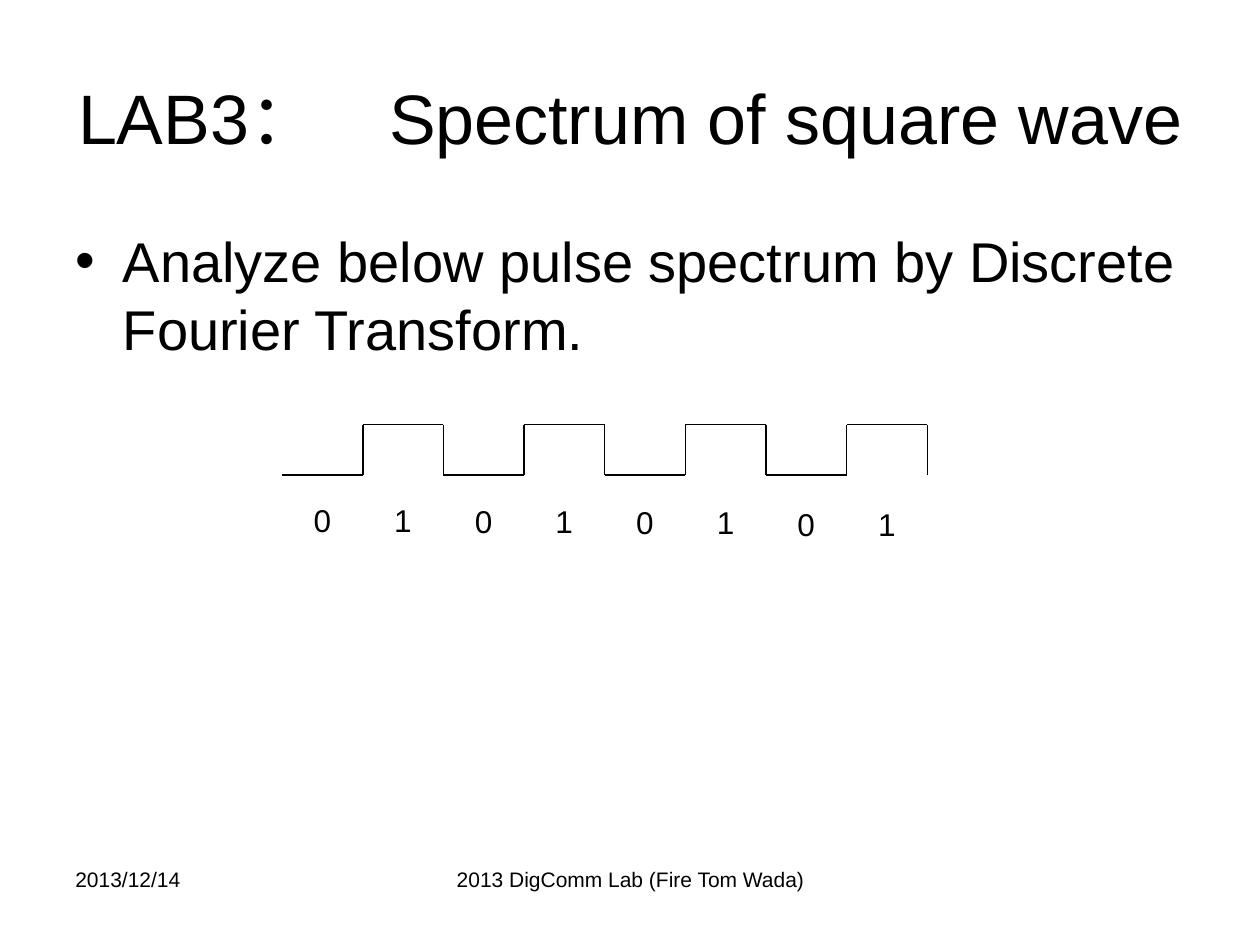
"""Build the LAB3 slide on the spectrum of a square wave."""
from dataclasses import dataclass
from typing import Any

from lxml import etree
from pptx import Presentation
from pptx import util as u
from pptx.dml import color
from pptx.enum import shapes, text
from pptx.oxml import ns

BLACK = color.RGBColor(0, 0, 0)
WHITE = color.RGBColor(255, 255, 255)
LEFT, MID, CENTER = text.PP_ALIGN.LEFT, text.MSO_ANCHOR.MIDDLE, text.PP_ALIGN.CENTER
TOP = text.MSO_ANCHOR.TOP
BITS = "01010101"
START, STEP = 2.24, 0.64
LOW, HIGH = 3.77, 3.37


@dataclass
class Label:
    """Hold the words, box and look of one text."""
    words: str
    box: tuple[float, float, float, float]
    size: int
    align: Any = LEFT
    anchor: Any = TOP


def assign(item: Any, values: dict[str, Any]) -> None:
    """Set each named value on the item."""
    for name, value in values.items():
        setattr(item, name, value)


def fill(shape: Any, label: Label) -> None:
    """Place a shape and write its formatted text."""
    sides = ("left", "top", "width", "height")
    assign(shape, {s: u.Inches(v) for s, v in zip(sides, label.box)})
    frame = shape.text_frame
    assign(frame, {"word_wrap": True, "auto_size": text.MSO_AUTO_SIZE.NONE,
                   "vertical_anchor": label.anchor})
    para = frame.paragraphs[0]
    para.alignment = label.align
    run = para.add_run()
    run.text = label.words
    assign(run.font, {"name": "Arial", "size": u.Pt(label.size)})
    run.font.color.rgb = BLACK


def write(parent: Any, label: Label) -> None:
    """Add a text box for a label."""
    fill(parent.add_textbox(*map(u.Inches, label.box)), label)


def draw(parent: Any, *ends: float) -> None:
    """Add a thin straight line between two points."""
    line = parent.add_connector(shapes.MSO_CONNECTOR.STRAIGHT, *map(u.Inches, ends))
    line.line.color.rgb = BLACK
    line.line.width = u.Pt(0.75)
    etree.SubElement(line.element.spPr, ns.qn("a:effectLst"))


def wave(parent: Any) -> None:
    """Draw the pulse train with a digit below each bit."""
    for i, bit in enumerate(BITS):
        left = START + i * STEP
        right = left + STEP
        level = HIGH if bit == "1" else LOW
        draw(parent, left, level, right, level)
        draw(parent, right, LOW, right, HIGH)
        top = 3.91 + i // 2 * 0.01
        write(parent, Label(bit, (left + 0.15, top, 0.39, 0.43), 18, anchor=MID))


def main() -> None:
    """Build and save the slide."""
    deck = Presentation()
    assign(deck, {"slide_width": u.Inches(10), "slide_height": u.Inches(7.5)})
    slide = deck.slides.add_slide(deck.slide_layouts[1])
    slide.background.fill.solid()
    slide.background.fill.fore_color.rgb = WHITE
    title, body = slide.placeholders
    fill(title, Label("LAB3：　Spectrum of square wave",
                      (0.5, 0.3, 9, 1.25), 40, CENTER, MID))
    fill(body, Label("Analyze below pulse spectrum by Discrete Fourier Transform.",
                     (0.5, 1.75, 9, 1.61), 32))
    write(slide.shapes, Label("2013/12/14", (0.5, 6.83, 2.33, 0.52), 12))
    write(slide.shapes, Label("2013 DigComm Lab (Fire Tom Wada)",
                              (3.42, 6.83, 3.17, 0.52), 12, CENTER))
    wave(slide.shapes.add_group_shape().shapes)
    deck.save("out.pptx")


if __name__ == "__main__":
    main()
